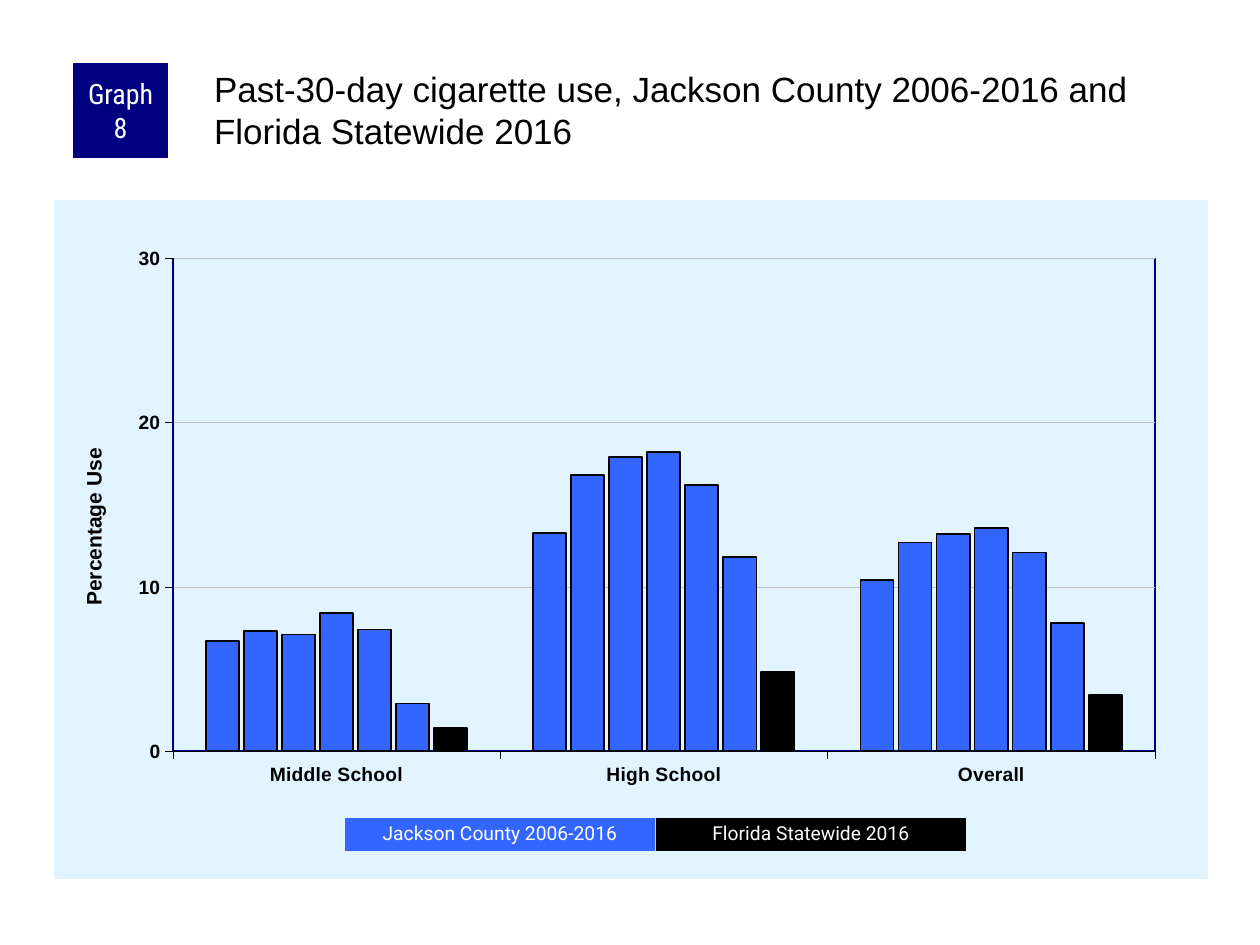
from dataclasses import dataclass

from pptx import Presentation
from pptx import util as u
from pptx.chart.data import CategoryChartData
from pptx.dml.color import RGBColor
from pptx.enum import chart as ch, shapes, text
from pptx.oxml import parse_xml
from pptx.oxml.ns import nsdecls, qn

PX_PER_INCH = 126
COLORS = {
    "county": "3366FF",
    "state": "000000",
    "badge": "000080",
    "panel": "E1F4FF",
    "grid": "C0C0C0",
    "ink": "000000",
    "paper": "FFFFFF",
}
LEVELS = ["Middle School", "High School", "Overall"]
COUNTY_USE = [
    (6.7, 13.3, 10.4),
    (7.3, 16.8, 12.7),
    (7.1, 17.9, 13.2),
    (8.4, 18.2, 13.6),
    (7.4, 16.2, 12.1),
    (2.9, 11.8, 7.8),
]
STATE_USE = (1.4, 4.8, 3.4)


@dataclass(frozen=True)
class Label:
    caption: str
    left: int
    top: int
    width: int
    height: int
    fill: str
    font: str
    size: int
    spacing: float = 1.0
    inset: tuple = (6, 0, 6, 0)


LEGEND_LEFT, LEGEND_WIDTH = 345, 310
LEGEND = [
    Label(caption, LEGEND_LEFT + i * (LEGEND_WIDTH + 1), 818, LEGEND_WIDTH, 33,
          fill, "Roboto", 11, spacing=0.9)
    for i, (caption, fill) in enumerate(
        [("Jackson County 2006-2016", "county"), ("Florida Statewide 2016", "state")])
]
BADGE = Label("Graph 8", 73, 63, 95, 95, "badge", "Roboto Condensed", 16)


def px(length: int) -> u.Emu:
    return u.Emu(round(length * 914400 / PX_PER_INCH))


def rgb(name: str) -> RGBColor:
    return RGBColor.from_string(COLORS[name])


def style_font(font, name="Arial", size=11, color="ink", bold=False) -> None:
    font.name, font.size, font.bold = name, u.Pt(size), bold
    font.color.rgb = rgb(color)


def style_line(line, color: str, width: float) -> None:
    line.color.rgb = rgb(color)
    line.width = u.Pt(width)


def write(frame, words: str, *, inset=(0, 0, 0, 0), align=text.PP_ALIGN.LEFT,
          anchor=text.MSO_ANCHOR.TOP, spacing=1.0, **font) -> None:
    frame.word_wrap = True
    frame.auto_size = text.MSO_AUTO_SIZE.NONE
    frame.vertical_anchor = anchor
    (frame.margin_left, frame.margin_top,
     frame.margin_right, frame.margin_bottom) = map(px, inset)
    paragraph = frame.paragraphs[0]
    paragraph.alignment, paragraph.line_spacing = align, spacing
    run = paragraph.add_run()
    run.text = words
    style_font(run.font, **font)


def add_label(slide, label: Label) -> None:
    box = slide.shapes.add_shape(
        shapes.MSO_SHAPE.RECTANGLE,
        *map(px, (label.left, label.top, label.width, label.height)))
    box.shadow.inherit = False
    box.fill.solid()
    box.fill.fore_color.rgb = rgb(label.fill)
    box.line.fill.background()
    write(box.text_frame, label.caption, inset=label.inset,
          align=text.PP_ALIGN.CENTER, anchor=text.MSO_ANCHOR.MIDDLE,
          spacing=label.spacing, name=label.font, size=label.size, color="paper")


def manual_layout(parent, index: int, target: str = "", **places: float) -> None:
    """Pin a chart part at fractions of the chart's size."""
    for old in parent.findall(qn("c:layout")):
        parent.remove(old)
    tags = f'<c:layoutTarget val="{target}"/>' if target else ""
    tags += '<c:xMode val="edge"/><c:yMode val="edge"/>'
    tags += "".join(f'<c:{key} val="{value}"/>' for key, value in places.items())
    parent.insert(index, parse_xml(
        f'<c:layout {nsdecls("c")}><c:manualLayout>{tags}</c:manualLayout></c:layout>'))


def area_format(fill: str, line: str):
    return parse_xml(f'<c:spPr {nsdecls("c", "a")}>{fill}{line}</c:spPr>')


def solid(color: str) -> str:
    return f'<a:solidFill><a:srgbClr val="{COLORS[color]}"/></a:solidFill>'


def add_use_chart(slide) -> None:
    data = CategoryChartData()
    data.categories = LEVELS
    for number, values in enumerate([*COUNTY_USE, STATE_USE], 1):
        data.add_series(f"Series {number}", values)
    chart = slide.shapes.add_chart(
        ch.XL_CHART_TYPE.COLUMN_CLUSTERED,
        *map(px, (54, 200, 1154, 679)), data).chart
    chart.has_title = chart.has_legend = False
    style_font(chart.font, size=8)

    # Columns
    plot = chart.plots[0]
    plot.gap_width, plot.overlap, plot.vary_by_categories = 200, -15, False
    for i, series in enumerate(plot.series):
        series.format.fill.solid()
        series.format.fill.fore_color.rgb = rgb("county" if i < len(COUNTY_USE) else "state")
        style_line(series.format.line, "ink", 1)

    # Axes
    for axis in (chart.category_axis, chart.value_axis):
        axis.major_tick_mark = ch.XL_TICK_MARK.OUTSIDE
        axis.minor_tick_mark = ch.XL_TICK_MARK.NONE
        style_font(axis.tick_labels.font, bold=True)
        style_line(axis.format.line, "ink", 0.25)
    use_axis = chart.value_axis
    use_axis.minimum_scale, use_axis.maximum_scale, use_axis.major_unit = 0, 30, 10
    use_axis.has_major_gridlines = True
    style_line(use_axis.major_gridlines.format.line, "grid", 0.25)
    heading = use_axis.axis_title
    heading.text_frame.text = "Percentage Use"
    style_font(heading.text_frame.paragraphs[0].runs[0].font, size=12, bold=True)
    body = heading.text_frame._txBody.find(qn("a:bodyPr"))
    body.set("rot", "-5400000")
    body.set("vert", "horz")
    manual_layout(heading._element, 1, x=0.02, y=0.36)

    # Panel and plot frame
    space = chart._chartSpace
    space.find(qn("c:chart")).addnext(area_format(solid("panel"), "<a:ln><a:noFill/></a:ln>"))
    plot_area = space.find(".//" + qn("c:plotArea"))
    manual_layout(plot_area, 0, "inner", x=0.103, y=0.086, w=0.851, h=0.726)
    plot_area.append(area_format("<a:noFill/>", f'<a:ln w="12700">{solid("badge")}</a:ln>'))


def main() -> None:
    deck = Presentation()
    deck.slide_width, deck.slide_height = px(1260), px(945)
    slide = deck.slides.add_slide(deck.slide_layouts[5])

    # Heading
    title = slide.shapes.title
    title.left, title.top, title.width, title.height = map(px, (210, 63, 998, 105))
    write(title.text_frame,
          "Past-30-day cigarette use, Jackson County 2006-2016 and Florida Statewide 2016",
          inset=(4, 4, 0, 0), size=20)

    # Chart, then the labels that sit above it
    add_use_chart(slide)
    for label in [BADGE, *LEGEND]:
        add_label(slide, label)

    deck.save("out.pptx")


if __name__ == "__main__":
    main()
